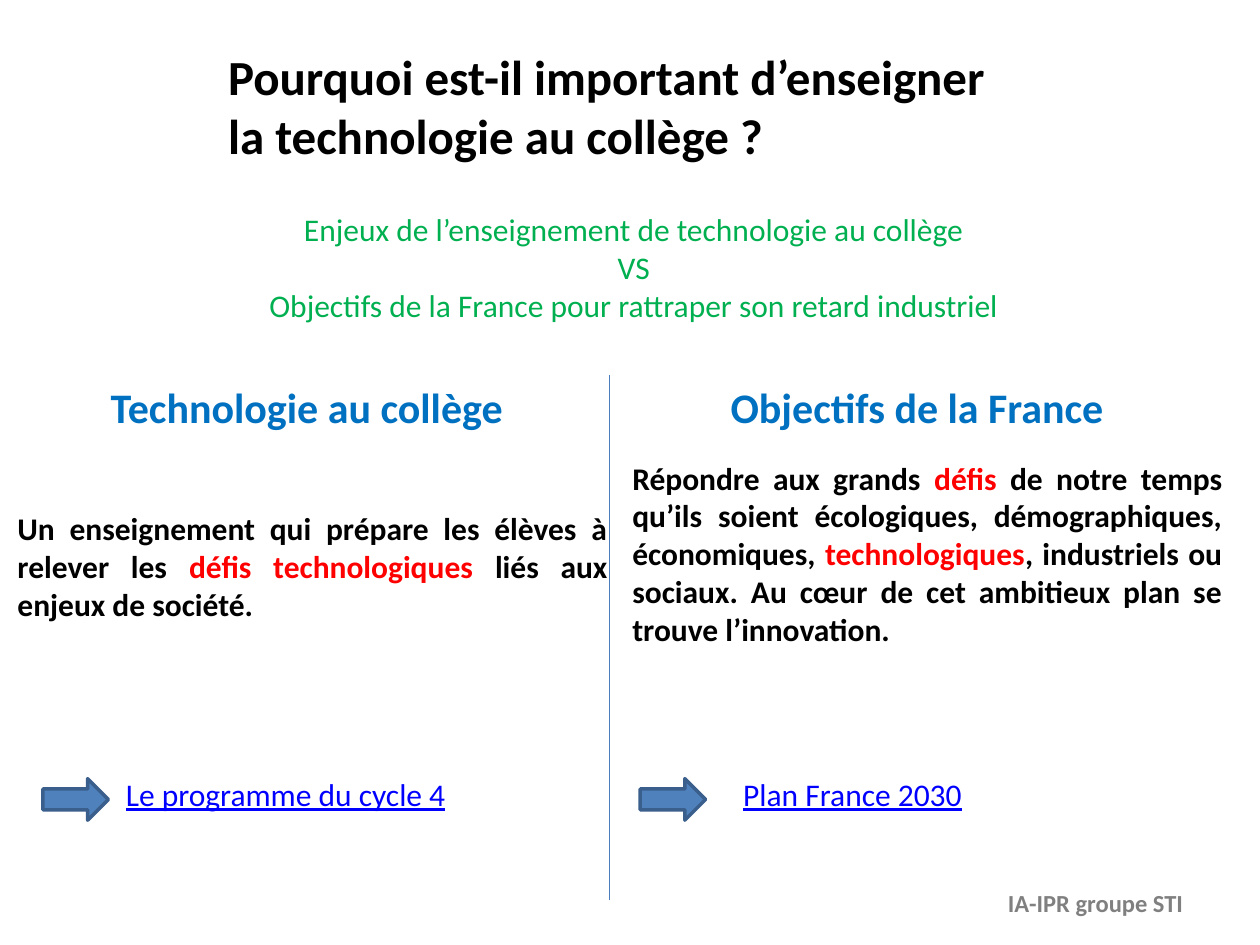
from pptx import Presentation
from pptx.dml.color import RGBColor
from pptx.enum.shapes import MSO_CONNECTOR as CONN, MSO_SHAPE as SHAPE
from pptx.enum.text import MSO_ANCHOR as ANCHOR, MSO_AUTO_SIZE as FIT, PP_ALIGN as AL
from pptx.oxml.ns import qn
from pptx.util import Inches, Pt
from lxml.etree import SubElement

BLACK = RGBColor(0, 0, 0)
RED = RGBColor(0xFF, 0, 0)
GREEN = RGBColor(0, 0xB0, 0x50)
HEADING = RGBColor(0, 0x70, 0xC0)
LINK = RGBColor(0, 0, 0xFF)
GRAY = RGBColor(0x80, 0x80, 0x80)
ARROW = RGBColor(0x4F, 0x81, 0xBD)
ARROW_EDGE = RGBColor(0x3A, 0x5F, 0x8C)
DIVIDER = RGBColor(0x4B, 0x7E, 0xBC)

prs = Presentation()
prs.slide_width, prs.slide_height = Inches(10), Inches(7.5)
slide = prs.slides.add_slide(prs.slide_layouts[5])
U = prs.slide_width // 100


def grid(*cells):
    return [int(c * U) for c in cells]


def write(sp, cells, lines, size, color, bold=False, align=AL.LEFT, underline=False):
    sp.left, sp.top, sp.width, sp.height = grid(*cells)
    tf = sp.text_frame
    tf.word_wrap = True
    tf.auto_size = FIT.NONE
    tf.vertical_anchor = ANCHOR.TOP
    for i, line in enumerate(lines):
        p = tf.paragraphs[0] if i == 0 else tf.add_paragraph()
        p.alignment = align
        p.font.name, p.font.size = "Calibri", Pt(size)
        p.font.bold, p.font.underline = bold, underline
        p.font.color.rgb = color
        for j, part in enumerate(line.split("|")):
            r = p.add_run()
            r.text = part
            if j % 2:
                r.font.color.rgb = RED


write(slide.shapes.title, (17.1, 3.2, 72.4, 10.4),
      ["Pourquoi est-il important d’enseigner", "la technologie au collège ?"],
      28, BLACK, bold=True)

write(slide.shapes.add_textbox(0, 0, 0, 0), (3.4, 16.2, 93.8, 10.1),
      ["Enjeux de l’enseignement de technologie au collège", "VS",
       "Objectifs de la France pour rattraper son retard industriel"],
      18, GREEN, align=AL.CENTER)

x, top, bottom = grid(48.4, 29.8, 71.4)
divider = slide.shapes.add_connector(CONN.STRAIGHT, x, top, x, bottom)
divider.line.color.rgb, divider.line.width = DIVIDER, Pt(0.75)
SubElement(divider._element.spPr, qn("a:effectLst"))

columns = [
    (7.8, "Technologie au collège", (0.4, 39.9, 48.8, 10.1),
     "Un enseignement qui prépare les élèves à relever les |défis technologiques |"
     "liés aux enjeux de société.",
     3.4, 9, "Le programme du cycle 4"),
    (57, "Objectifs de la France", (49.2, 35.9, 48.8, 19.2),
     "Répondre aux grands |défis| de notre temps qu’ils soient écologiques, "
     "démographiques, économiques, |technologiques|, industriels ou sociaux. "
     "Au cœur de cet ambitieux plan se trouve l’innovation.",
     50.8, 58, "Plan France 2030"),
]
for head_x, head, body_cells, body, arrow_x, link_x, link in columns:
    write(slide.shapes.add_textbox(0, 0, 0, 0), (head_x, 29.8, 37, 5),
          [head], 24, HEADING, bold=True)
    write(slide.shapes.add_textbox(0, 0, 0, 0), body_cells,
          [body], 18, BLACK, bold=True, align=AL.JUSTIFY)
    arrow = slide.shapes.add_shape(SHAPE.RIGHT_ARROW, *grid(arrow_x, 61.8, 5.2, 3.3))
    arrow.shadow.inherit = False
    arrow.fill.solid()
    arrow.fill.fore_color.rgb = ARROW
    arrow.line.color.rgb, arrow.line.width = ARROW_EDGE, Pt(2)
    write(slide.shapes.add_textbox(0, 0, 0, 0), (link_x, 61, 35.1, 4),
          [link], 18, LINK, underline=True)

write(slide.shapes.add_textbox(0, 0, 0, 0), (64.2, 70, 30.7, 3.4),
      ["IA-IPR groupe STI"], 14, GRAY, bold=True, align=AL.RIGHT)

prs.save("out.pptx")
